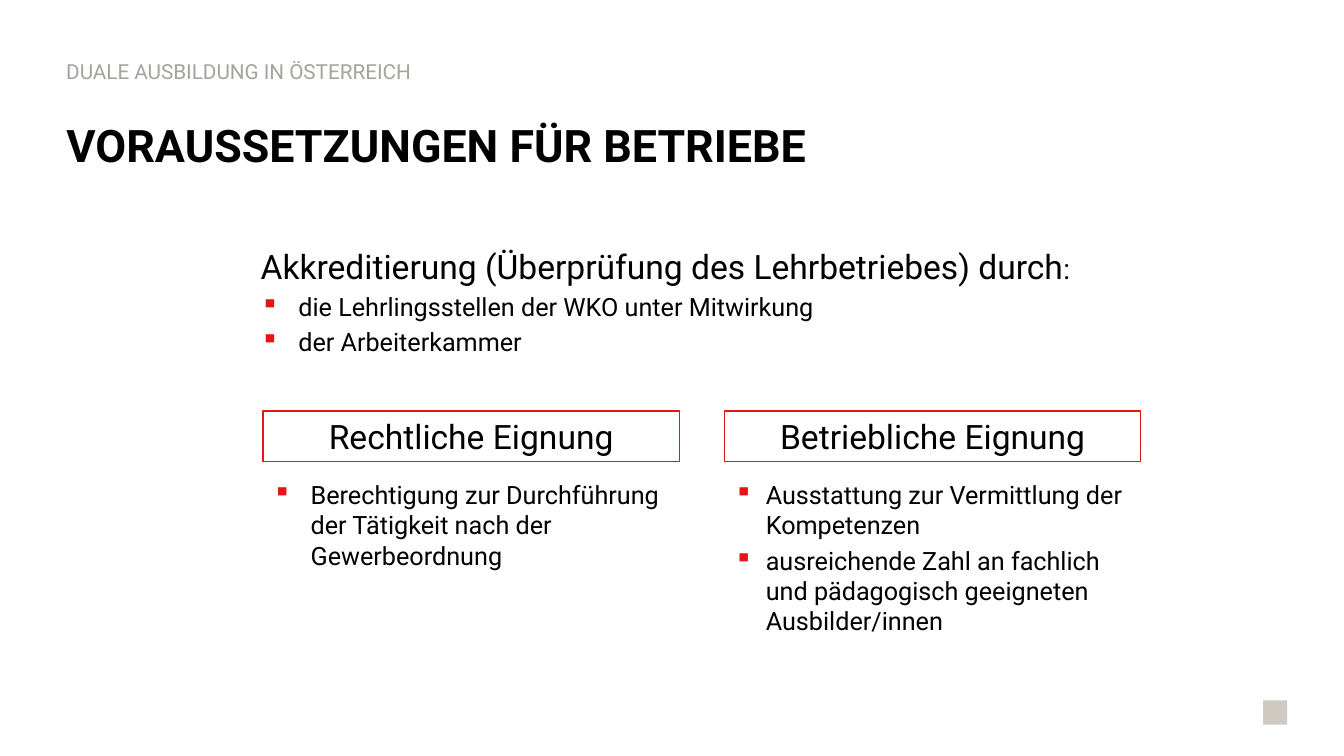
"""Build the slide on requirements for training companies in Austria."""
import lxml.etree
import pptx
import pptx.dml.color
import pptx.enum.shapes
import pptx.enum.text
import pptx.oxml.ns
import pptx.util

Cm, Pt = pptx.util.Cm, pptx.util.Pt
RGBColor = pptx.dml.color.RGBColor
qn = pptx.oxml.ns.qn
PP_ALIGN = pptx.enum.text.PP_ALIGN
RECT = pptx.enum.shapes.MSO_SHAPE.RECTANGLE
MIDDLE = pptx.enum.text.MSO_ANCHOR.MIDDLE

BLACK = RGBColor(0x00, 0x00, 0x00)
WHITE = RGBColor(0xFF, 0xFF, 0xFF)
RED = RGBColor(0xE6, 0x14, 0x14)
GREY = RGBColor(0xA6, 0xA3, 0x9D)
BEIGE = RGBColor(0xCE, 0xCA, 0xC2)


def add_run(p, text, size, color=BLACK, bold=False):
    r = p.add_run()
    r.text = text
    for name, value in {"name": "Roboto", "size": Pt(size), "bold": bold}.items():
        setattr(r.font, name, value)
    r.font.color.rgb = color


def add_bullet(p, text, indent, first=False, level=0):
    p.level = level
    if not first:
        p.space_before = Pt(3.6)
    pPr = p._p.get_or_add_pPr()
    pPr.set("marL", str(Cm(indent)))
    pPr.set("indent", str(-Cm(indent)))
    color = lxml.etree.SubElement(pPr, qn("a:buClr"))
    lxml.etree.SubElement(color, qn("a:srgbClr"), val=str(RED))
    lxml.etree.SubElement(pPr, qn("a:buChar"), char="▪")
    add_run(p, text, 18)


prs = pptx.Presentation()
prs.slide_width, prs.slide_height = Cm(33.87), Cm(19.05)
s = prs.slides.add_slide(prs.slide_layouts[5])

title = s.shapes.title
for name, value in {"left": 1.42, "top": 2.26, "width": 25.7, "height": 2.95}.items():
    setattr(title, name, Cm(value))
tf = title.text_frame
tf.vertical_anchor = MIDDLE
p = tf.paragraphs[0]
p.alignment = PP_ALIGN.LEFT
p.line_spacing = 0.9
add_run(p, "VORAUSSETZUNGEN FÜR BETRIEBE", 32, bold=True)

topic = s.shapes.add_textbox(Cm(1.42), Cm(1.42), Cm(15.49), Cm(0.84))
tf = topic.text_frame
tf.word_wrap = True
tf.vertical_anchor = MIDDLE
p = tf.paragraphs[0]
p.line_spacing = 0.9
add_run(p, "DUALE AUSBILDUNG IN ÖSTERREICH", 14.8, GREY)

accreditation = s.shapes.add_textbox(Cm(6.32), Cm(6.07), Cm(22.81), Cm(3.12))
tf = accreditation.text_frame
tf.word_wrap = True
p = tf.paragraphs[0]
add_run(p, "Akkreditierung (Überprüfung des Lehrbetriebes) durch", 24)
add_run(p, ":", 20)
for text in ("die Lehrlingsstellen der WKO unter Mitwirkung", "der Arbeiterkammer"):
    add_bullet(tf.add_paragraph(), text, 0.95, level=1)

columns = [
    (6.63, "Rechtliche Eignung", 3.48, 0.95,
     ["Berechtigung zur Durchführung der Tätigkeit nach der Gewerbeordnung"]),
    (18.26, "Betriebliche Eignung", 4.27, 0.79,
     ["Ausstattung zur Vermittlung der Kompetenzen",
      "ausreichende Zahl an fachlich und pädagogisch geeigneten Ausbilder/innen"]),
]
for left, heading, height, indent, points in columns:
    box = s.shapes.add_shape(RECT, Cm(left), Cm(10.36), Cm(10.49), Cm(1.27))
    box.shadow.inherit = False
    box.fill.solid()
    box.fill.fore_color.rgb = WHITE
    box.line.color.rgb = RED
    box.line.width = Pt(1)
    p = box.text_frame.paragraphs[0]
    p.alignment = PP_ALIGN.CENTER
    add_run(p, heading, 24)

    details = s.shapes.add_textbox(Cm(left), Cm(11.96), Cm(10.49), Cm(height))
    tf = details.text_frame
    tf.word_wrap = True
    for i, text in enumerate(points):
        p = tf.add_paragraph() if i else tf.paragraphs[0]
        add_bullet(p, text, indent, first=i == 0)

square = s.shapes.add_shape(RECT, Cm(31.83), Cm(17.65), Cm(0.61), Cm(0.61))
square.shadow.inherit = False
square.fill.solid()
square.fill.fore_color.rgb = BEIGE
square.line.fill.background()

prs.save("out.pptx")
